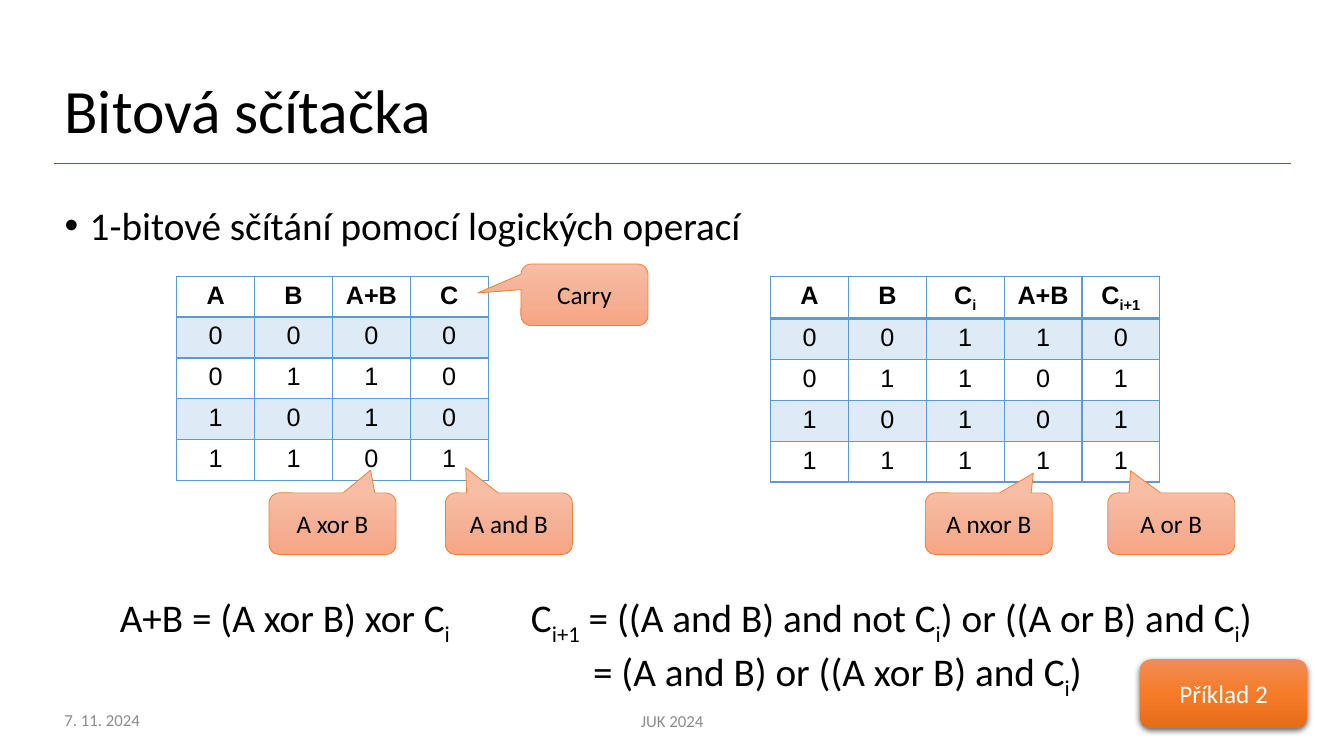
from lxml import etree
from pptx import Presentation
from pptx.dml.color import RGBColor
from pptx.enum.shapes import MSO_CONNECTOR, MSO_SHAPE
from pptx.enum.text import MSO_ANCHOR, MSO_AUTO_SIZE, PP_ALIGN
from pptx.oxml import parse_xml
from pptx.oxml.ns import nsdecls, qn
from pptx.util import Pt

LEFT, CENTER = PP_ALIGN.LEFT, PP_ALIGN.CENTER
TOP, MIDDLE = MSO_ANCHOR.TOP, MSO_ANCHOR.MIDDLE
CALLOUT, BUTTON = MSO_SHAPE.ROUNDED_RECTANGULAR_CALLOUT, MSO_SHAPE.ROUNDED_RECTANGLE
STRAIGHT, NO_FIT = MSO_CONNECTOR.STRAIGHT, MSO_AUTO_SIZE.NONE

COLORS = {
    "text": "000000", "muted": "8C8C8C", "light": "FFFFFF", "rule": "806000",
    "grid": "5B9BD5", "outline": "ED7D31", "shadow": "000000",
}
GRADIENTS = {
    "callout": ("F7BDA5", "F5B196", "F8A582"),
    "button": ("F18C57", "F67B28", "E56C19"),
}


def rgb(key):
    return RGBColor.from_string(COLORS[key])


class AdderSlide:
    """Holds the style and the slide being filled."""

    def __init__(self, slide):
        self.slide = slide

    def add_text(self, paragraph, text, size, color="text", align=LEFT,
                 font="Calibri", bold=False):
        """Add text in which every second part between bars is a subscript."""
        paragraph.alignment = align
        style = {"size": Pt(size), "name": font, "bold": bold}
        for i, part in enumerate(text.split("|")):
            run = paragraph.add_run()
            run.text = part
            for key, value in style.items():
                setattr(run.font, key, value)
            run.font.color.rgb = rgb(color)
            if i % 2:
                run._r.get_or_add_rPr().set("baseline", "-25000")

    def place(self, shape, box, anchor):
        for key, value in zip(("left", "top", "width", "height"), box):
            setattr(shape, key, Pt(value))
        frame = shape.text_frame
        settings = {"word_wrap": True, "auto_size": NO_FIT, "vertical_anchor": anchor}
        for key, value in settings.items():
            setattr(frame, key, value)
        return frame

    def title(self, text, box):
        paragraph = self.place(self.slide.shapes.title, box, MIDDLE).paragraphs[0]
        paragraph.line_spacing = 0.9
        self.add_text(paragraph, text, 44)

    def bullet(self, text, box):
        paragraph = self.place(self.slide.placeholders[1], box, TOP).paragraphs[0]
        props = paragraph._p.get_or_add_pPr()
        props.set("marL", str(Pt(18)))
        props.set("indent", str(Pt(-18)))
        etree.SubElement(props, qn("a:buFont")).set("typeface", "Arial")
        etree.SubElement(props, qn("a:buChar")).set("char", "•")
        paragraph.line_spacing = 0.9
        paragraph.space_before = Pt(0)
        self.add_text(paragraph, text, 28)

    def label(self, lines, box, size, color="text", align=LEFT, anchor=TOP, indent=0):
        """Add a text box; lines after the first are indented."""
        frame = self.place(self.slide.shapes.add_textbox(0, 0, 0, 0), box, anchor)
        for i, line in enumerate(lines):
            paragraph = frame.add_paragraph() if i else frame.paragraphs[0]
            if i:
                paragraph._p.get_or_add_pPr().set("marL", str(Pt(indent)))
            self.add_text(paragraph, line, size, color, align)

    def rule(self, left, right, y):
        line = self.slide.shapes.add_connector(STRAIGHT, Pt(left), Pt(y), Pt(right), Pt(y))
        line.line.color.rgb = rgb("rule")
        line.line.width = Pt(1)
        etree.SubElement(line._element.spPr, qn("a:effectLst"))

    def border(self, cell, side, width):
        props = cell._tc.get_or_add_tcPr()
        line = etree.SubElement(props, qn(f"a:ln{side}"), w=str(Pt(width)))
        fill = etree.SubElement(line, qn("a:solidFill"))
        etree.SubElement(fill, qn("a:srgbClr"), val=COLORS["grid"])

    def truth_table(self, rows, left, top, col_width=55.6, row_height=29.2):
        n_rows, n_cols = len(rows), len(rows[0])
        table = self.slide.shapes.add_table(
            n_rows, n_cols, Pt(left), Pt(top),
            Pt(col_width * n_cols), Pt(row_height * n_rows)).table
        table.first_row = table.horz_banding = False
        for column in table.columns:
            column.width = Pt(col_width)
        for r, values in enumerate(rows):
            table.rows[r].height = Pt(row_height)
            for c, value in enumerate(values):
                cell = table.cell(r, c)
                self.add_text(cell.text_frame.paragraphs[0], value, 18,
                              align=CENTER, font="Arial", bold=r == 0)
                for side in "LRTB":
                    header_edge = (r, side) in ((0, "B"), (1, "T"))
                    self.border(cell, side, 2 if header_edge else 1)
                if r % 2:
                    cell.fill.solid()
                    cell.fill.fore_color.rgb = rgb("grid")
                    tint = cell._tc.tcPr.find(qn("a:solidFill"))[0]
                    etree.SubElement(tint, qn("a:alpha"), val="20000")
                else:
                    cell.fill.background()

    def block(self, kind, text, box, gradient, color):
        """Add a gradient shape with centred text."""
        shape = self.slide.shapes.add_shape(kind, 0, 0, 0, 0)
        frame = self.place(shape, box, MIDDLE)
        self.add_text(frame.paragraphs[0], text, 18, color, CENTER)
        stops = "".join(
            f'<a:gs pos="{i * 50000}"><a:srgbClr val="{stop}"/></a:gs>'
            for i, stop in enumerate(GRADIENTS[gradient]))
        shape._element.spPr.find(qn("a:prstGeom")).addnext(parse_xml(
            f'<a:gradFill {nsdecls("a")} rotWithShape="1"><a:gsLst>{stops}</a:gsLst>'
            '<a:lin ang="5400000" scaled="0"/></a:gradFill>'))
        shape.shadow.inherit = False
        return shape

    def callout(self, text, left, top, tip):
        shape = self.block(CALLOUT, text, (left, top, 90.7, 44), "callout", "text")
        shape.line.color.rgb = rgb("outline")
        shape.line.width = Pt(0.5)
        shape.adjustments[0], shape.adjustments[1] = tip

    def button(self, text, box):
        shape = self.block(BUTTON, text, box, "button", "light")
        shape.line.fill.background()
        effects = shape._element.spPr.find(qn("a:effectLst"))
        shadow = etree.SubElement(
            effects, qn("a:outerShdw"), blurRad=str(Pt(4.5)), dist=str(Pt(1.5)),
            dir="5400000", algn="ctr", rotWithShape="0")
        tone = etree.SubElement(shadow, qn("a:srgbClr"), val=COLORS["shadow"])
        etree.SubElement(tone, qn("a:alpha"), val="63000")


def main():
    deck = Presentation()
    deck.slide_width, deck.slide_height = Pt(960), Pt(540)
    adder = AdderSlide(deck.slides.add_slide(deck.slide_layouts[1]))

    # Heading and topic
    adder.rule(38.9, 922.3, 116.6)
    adder.title("Bitová sčítačka", (38.9, 28.8, 797.8, 104.4))
    adder.bullet("1-bitové sčítání pomocí logických operací", (38.9, 144, 883.4, 342.7))

    # Footer
    adder.label(["7. 11. 2024"], (38.9, 499.7, 216, 28.8), 12, "muted", anchor=MIDDLE)
    adder.label(["JUK 2024"], (318.2, 500.4, 324, 28.8), 12, "muted", CENTER, MIDDLE)

    # Truth tables without and with the incoming carry
    half_adder = [("A", "B", "A+B", "C"), "0000", "0110", "1010", "1101"]
    full_adder = [("A", "B", "C|i", "A+B", "C|i+1"), "00110", "01101", "10101", "11111"]
    adder.truth_table(half_adder, 126.3, 197.3)
    adder.truth_table(full_adder, 550.5, 197.3)

    # Operations behind the result columns
    for operation, left, tip in (
            ("A xor B", 192.2, (0.3, -0.87)), ("A and B", 318.2, (-0.34, -0.91)),
            ("A nxor B", 661, (0.35, -0.82)), ("A or B", 791.3, (-0.32, -0.86))):
        adder.callout(operation, left, 352.1, tip)
    adder.callout("Carry", 372.2, 188.6, (-0.84, -0.03))

    # Formulas
    adder.label(["A+B = (A xor B) xor C|i"], (78.5, 420.5, 254.2, 41), 28)
    adder.label(["C|i+1| = ((A and B) and not C|i|) or ((A or B) and C|i|)",
                 "= (A and B) or ((A xor B) and C|i|)"],
                (372.2, 420.5, 540, 74.9), 28, indent=44.4)

    # Link to the exercise
    adder.button("Příklad 2", (814.3, 470.9, 119.5, 49))
    deck.save("out.pptx")


if __name__ == "__main__":
    main()
